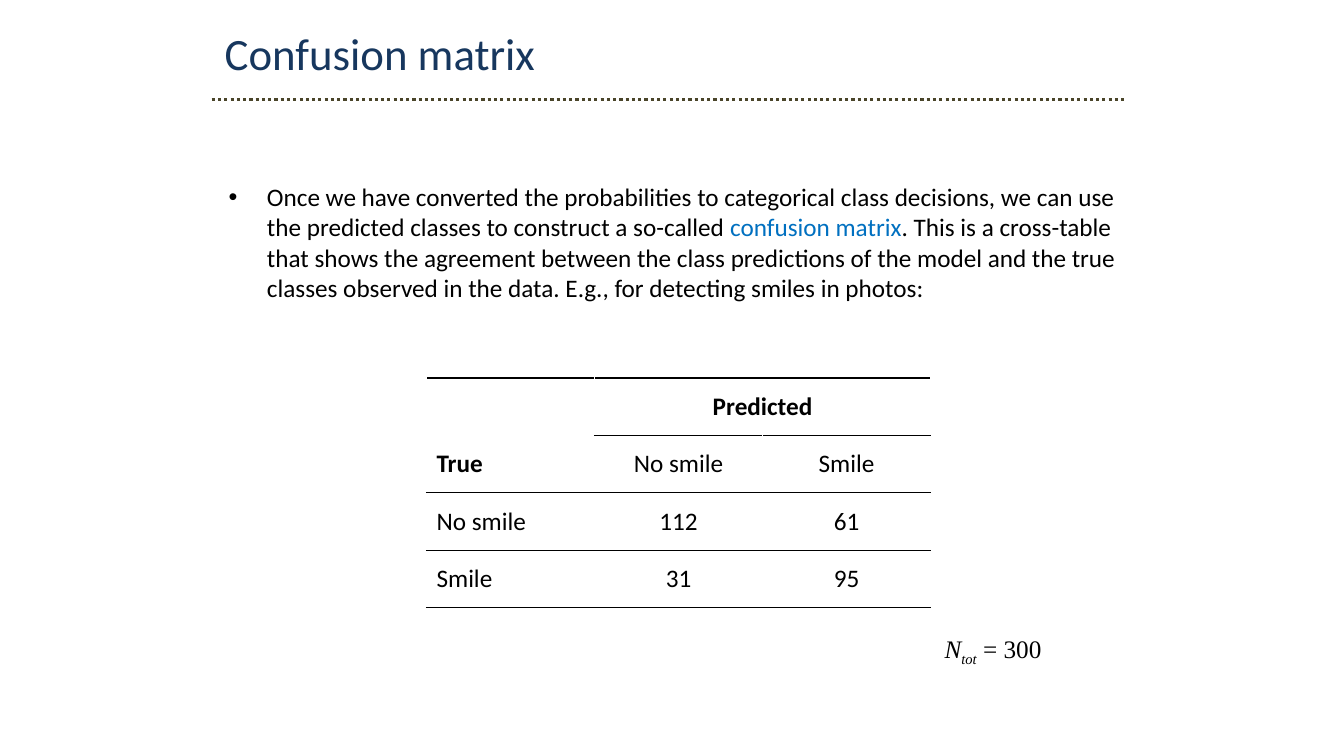
from lxml.etree import SubElement
from pptx import Presentation
from pptx.dml.color import RGBColor
from pptx.enum.dml import MSO_LINE
from pptx.enum.shapes import MSO_CONNECTOR
from pptx.enum.text import MSO_ANCHOR, PP_ALIGN
from pptx.oxml.ns import qn
from pptx.util import Inches, Pt

BLACK = RGBColor(0x00, 0x00, 0x00)
NAVY = RGBColor(0x17, 0x37, 0x5E)
BLUE = RGBColor(0x00, 0x70, 0xC0)
BROWN = RGBColor(0x4A, 0x45, 0x2A)

BODY = {"name": "Calibri", "size": Pt(18), "color": BLACK}
TITLE = {**BODY, "size": Pt(32), "color": NAVY}
TERM = {**BODY, "color": BLUE}
BOLD = {**BODY, "bold": True}
FORMULA = {**BODY, "name": "Times New Roman"}
SYMBOL = {**FORMULA, "italic": True}
SUBSCRIPT = {**SYMBOL, "baseline": "-25000"}

title = [("Confusion matrix", TITLE)]
explanation = [
    ("Once we have converted the probabilities to categorical class decisions, we can use "
     "the predicted classes to construct a so-called ", BODY),
    ("confusion matrix", TERM),
    (". This is a cross-table that shows the agreement between the class predictions of the "
     "model and the true classes observed in the data. E.g., for detecting smiles in photos:", BODY),
]
total = [("N", SYMBOL), ("tot", SUBSCRIPT), (" = 300", FORMULA)]
matrix = [
    ["", "Predicted", ""],
    ["True", "No smile", "Smile"],
    ["No smile", "112", "61"],
    ["Smile", "31", "95"],
]
headings = {"Predicted", "True"}
unruled = {(1, 0)}
ROW_HEIGHT = 0.57


def add_runs(paragraph, runs):
    for text, formats in runs:
        run = paragraph.add_run()
        run.text = text
        for key, value in formats.items():
            if key == "color":
                run.font.color.rgb = value
            elif key == "baseline":
                run._r.get_or_add_rPr().set(key, value)
            else:
                setattr(run.font, key, value)


def add_text(slide, box, runs, wrap=True):
    frame = slide.shapes.add_textbox(*map(Inches, box)).text_frame
    frame.word_wrap = wrap
    paragraph = frame.paragraphs[0]
    add_runs(paragraph, runs)
    return paragraph


def add_bullet(paragraph, indent):
    properties = paragraph._p.get_or_add_pPr()
    properties.set("marL", str(Inches(indent)))
    properties.set("indent", str(-Inches(indent)))
    SubElement(properties, qn("a:buFont")).set("typeface", "Arial")
    SubElement(properties, qn("a:buChar")).set("char", "•")


def add_border(cell, side):
    line = SubElement(cell._tc.get_or_add_tcPr(), qn(f"a:{side}"), w=str(Pt(1)))
    fill = SubElement(line, qn("a:solidFill"))
    SubElement(fill, qn("a:srgbClr")).set("val", str(BLACK))


def add_matrix(slide, left, top, width):
    rows, columns = len(matrix), len(matrix[0])
    table = slide.shapes.add_table(rows, columns, Inches(left), Inches(top),
                                   Inches(width), Inches(rows * ROW_HEIGHT)).table
    table.first_row = table.horz_banding = False
    table.cell(0, 1).merge(table.cell(0, 2))
    for row, texts in enumerate(matrix):
        for column, text in enumerate(texts):
            cell = table.cell(row, column)
            for side, edge in (("lnT", row), ("lnB", row + 1)):
                if (edge, column) not in unruled:
                    add_border(cell, side)
            cell.fill.background()
            cell.vertical_anchor = MSO_ANCHOR.MIDDLE
            paragraph = cell.text_frame.paragraphs[0]
            paragraph.alignment = PP_ALIGN.CENTER if column else PP_ALIGN.LEFT
            if text:
                add_runs(paragraph, [(text, BOLD if text in headings else BODY)])


def main():
    presentation = Presentation()
    presentation.slide_width, presentation.slide_height = Inches(13.33), Inches(7.5)
    slide = presentation.slides.add_slide(presentation.slide_layouts[6])

    add_bullet(add_text(slide, (2.17, 1.75, 9, 5.62), explanation), 0.38)
    add_text(slide, (2.13, 0.21, 8.79, 0.64), title)

    rule = slide.shapes.add_connector(MSO_CONNECTOR.STRAIGHT, Inches(2.1), Inches(0.99),
                                      Inches(11.16), Inches(0.99))
    rule.line.color.rgb = BROWN
    rule.line.width = Pt(2.25)
    rule.line.dash_style = MSO_LINE.ROUND_DOT
    SubElement(rule._element.spPr, qn("a:effectLst"))

    add_matrix(slide, 4.23, 3.75, 5)
    add_text(slide, (9.27, 6.23, 1.2, 0.4), total, wrap=False)
    presentation.save("out.pptx")


if __name__ == "__main__":
    main()
